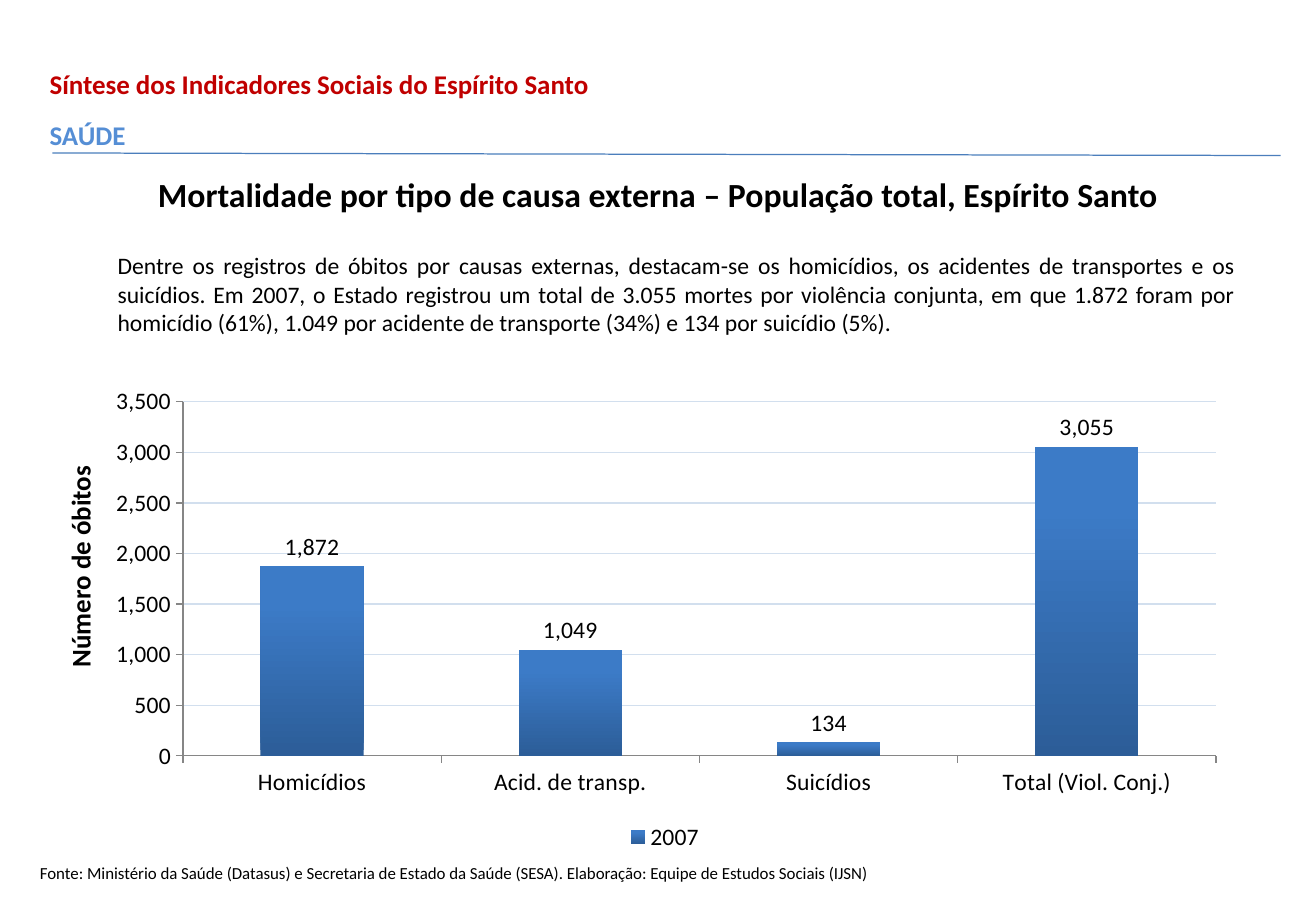
from dataclasses import dataclass

from lxml.etree import SubElement
from pptx import Presentation
from pptx.chart.data import CategoryChartData
from pptx.dml.color import RGBColor
from pptx.enum.chart import XL_CHART_TYPE, XL_LABEL_POSITION, XL_LEGEND_POSITION, XL_TICK_MARK
from pptx.enum.shapes import MSO_CONNECTOR
from pptx.enum.text import MSO_ANCHOR, PP_ALIGN
from pptx.oxml.ns import qn
from pptx.util import Pt


@dataclass(frozen=True)
class Theme:
    font: str = "Calibri"
    black: str = "000000"
    red: str = "C00000"
    blue: str = "558ED5"
    rule: str = "4B7EBC"
    axis: str = "868686"
    grid: str = "D2DFEE"
    bar_bottom: str = "2C5D98"
    bar_top: str = "3C7BC7"
    title: int = 20
    heading: int = 16
    body: int = 14
    source: int = 10


THEME = Theme()


class SlideBuilder:
    def __init__(self, slide, theme):
        self.slide = slide
        self.theme = theme

    def style_font(self, font, size, color, bold=False):
        values = {"name": self.theme.font, "size": Pt(size), "bold": bold}
        for name, value in values.items():
            setattr(font, name, value)
        font.color.rgb = RGBColor.from_string(color)

    def style_line(self, line, color):
        line.color.rgb = RGBColor.from_string(color)
        line.width = Pt(0.75)

    def text(self, box, lines, size, bold=False, align=PP_ALIGN.LEFT,
             anchor=MSO_ANCHOR.TOP, rotation=0, gap=0):
        """Place (text, color) lines in a box, with gap points between paragraphs."""
        shape = self.slide.shapes.add_textbox(*map(Pt, box))
        shape.rotation = rotation
        frame = shape.text_frame
        frame.word_wrap = True
        frame.vertical_anchor = anchor
        for index, (content, color) in enumerate(lines):
            paragraph = frame.add_paragraph() if index else frame.paragraphs[0]
            paragraph.alignment = align
            if index:
                paragraph.space_before = Pt(gap)
            run = paragraph.add_run()
            run.text = content
            self.style_font(run.font, size, color, bold)

    def line(self, start, end, color):
        connector = self.slide.shapes.add_connector(
            MSO_CONNECTOR.STRAIGHT, *map(Pt, start + end))
        self.style_line(connector.line, color)
        SubElement(connector.element.spPr, qn("a:effectLst"))

    def column_chart(self, box, categories, name, values, plot_area):
        theme = self.theme
        data = CategoryChartData(number_format="#,##0")
        data.categories = categories
        data.add_series(name, values)
        chart = self.slide.shapes.add_chart(
            XL_CHART_TYPE.COLUMN_CLUSTERED, *map(Pt, box), data).chart
        self.style_font(chart.font, theme.body, theme.black)
        chart.has_title = False
        chart.has_legend = True
        chart.legend.position = XL_LEGEND_POSITION.BOTTOM
        chart.legend.include_in_layout = False
        self.style_columns(chart.plots[0])
        self.style_axes(chart.category_axis, chart.value_axis)
        self.place_plot_area(chart, plot_area)

    def style_columns(self, plot):
        plot.gap_width = 150
        plot.vary_by_categories = False
        plot.has_data_labels = True
        label_values = {
            "show_value": True,
            "position": XL_LABEL_POSITION.OUTSIDE_END,
            "number_format": "#,##0",
            "number_format_is_linked": False,
        }
        for name, value in label_values.items():
            setattr(plot.data_labels, name, value)
        fill = plot.series[0].format.fill
        fill.gradient()
        fill.gradient_angle = 90
        stops = ((0, self.theme.bar_bottom), (0.8, self.theme.bar_top))
        for stop, (position, color) in zip(fill.gradient_stops, stops):
            stop.position = position
            stop.color.rgb = RGBColor.from_string(color)

    def style_axes(self, category_axis, value_axis):
        for axis in (category_axis, value_axis):
            axis.major_tick_mark = XL_TICK_MARK.OUTSIDE
            self.style_line(axis.format.line, self.theme.axis)
        scale = {"minimum_scale": 0, "maximum_scale": 3500, "major_unit": 500,
                 "has_major_gridlines": True}
        for name, value in scale.items():
            setattr(value_axis, name, value)
        value_axis.tick_labels.number_format = "#,##0"
        value_axis.tick_labels.number_format_is_linked = False
        self.style_line(value_axis.major_gridlines.format.line, self.theme.grid)

    def place_plot_area(self, chart, fractions):
        """Fix the inner plot area as x, y, w, h fractions of the chart."""
        plot_area = chart.element.find(".//" + qn("c:plotArea"))
        layout = plot_area.find(qn("c:layout"))
        if layout is None:
            layout = SubElement(plot_area, qn("c:layout"))
            plot_area.insert(0, layout)
        manual = SubElement(layout, qn("c:manualLayout"))
        settings = {"layoutTarget": "inner", "xMode": "edge", "yMode": "edge",
                    **dict(zip("xywh", fractions))}
        for tag, value in settings.items():
            SubElement(manual, qn(f"c:{tag}")).set("val", str(value))


def main():
    presentation = Presentation()
    presentation.slide_width = Pt(780)
    presentation.slide_height = Pt(540)
    slide = presentation.slides.add_slide(presentation.slide_layouts[6])
    builder = SlideBuilder(slide, THEME)

    builder.text((22.3, 36.7, 757, 81),
                 [("Síntese dos Indicadores Sociais do Espírito Santo", THEME.red),
                  ("SAÚDE", THEME.blue)],
                 THEME.heading, bold=True, gap=11)
    builder.line((31, 90.7), (759, 92.2), THEME.rule)
    builder.text((0, 99.4, 780, 31),
                 [("Mortalidade por tipo de causa externa – População total, Espírito Santo",
                   THEME.black)],
                 THEME.title, bold=True, align=PP_ALIGN.CENTER)
    builder.text((16.6, 507.6, 579, 19.4),
                 [("Fonte: Ministério da Saúde (Datasus) e Secretaria de Estado da Saúde (SESA). "
                   "Elaboração: Equipe de Estudos Sociais (IJSN)", THEME.black)],
                 THEME.source, anchor=MSO_ANCHOR.MIDDLE)
    builder.text((62.6, 145.4, 677, 58.3),
                 [("Dentre os registros de óbitos por causas externas, destacam-se os homicídios, "
                   "os acidentes de transportes e os suicídios. Em 2007, o Estado registrou um "
                   "total de 3.055 mortes por violência conjunta, em que 1.872 foram por homicídio "
                   "(61%), 1.049 por acidente de transporte (34%) e 134 por suicídio (5%).",
                   THEME.black)],
                 THEME.body, align=PP_ALIGN.JUSTIFY)
    builder.column_chart((54, 224, 680.4, 283.7),
                         ["Homicídios", "Acid. de transp.", "Suicídios", "Total (Viol. Conj.)"],
                         "2007", [1872, 1049, 134, 3055],
                         plot_area=(0.08, 0.05, 0.9, 0.74))
    builder.text((-26.6, 322.6, 148.3, 26.6), [("Número de óbitos", THEME.black)],
                 THEME.heading, bold=True, align=PP_ALIGN.CENTER, rotation=270)

    presentation.save("out.pptx")


if __name__ == "__main__":
    main()
